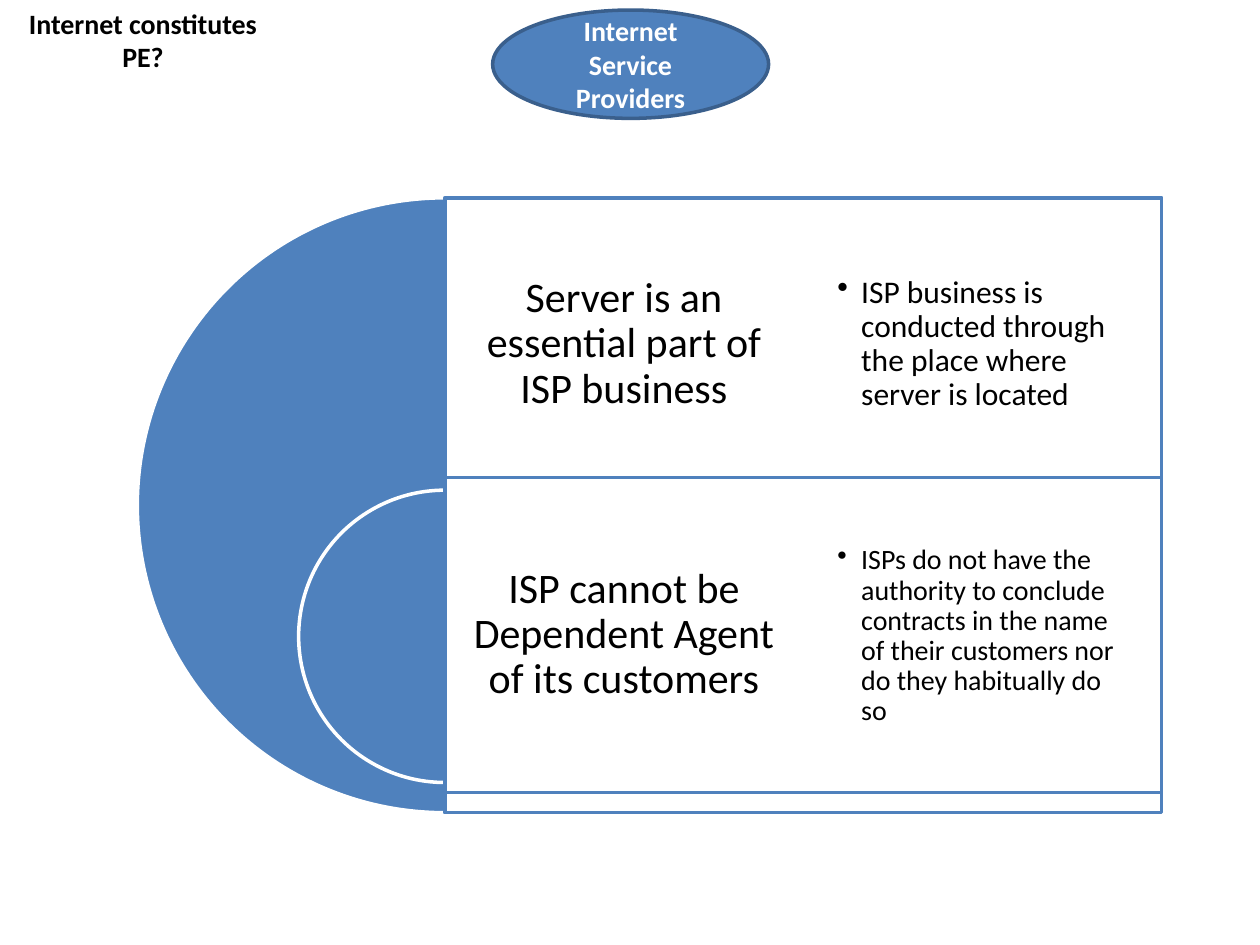
from lxml.etree import SubElement
from pptx import Presentation
from pptx.dml.color import RGBColor
from pptx.enum.shapes import MSO_SHAPE
from pptx.enum.text import MSO_ANCHOR, MSO_AUTO_SIZE, PP_ALIGN
from pptx.oxml.ns import qn
from pptx.util import Inches, Pt

COLORS = {"blue": "4F81BD", "dark_blue": "3A5F8C", "white": "FFFFFF", "black": "000000"}

# Two columns and two rows to the right of the half circles
GRID_LEFT, GRID_TOP = 3.53, 1.57
COLUMN, ROW = 2.845, 2.32

# Diameter, panel top, panel height, statement, detail, detail size
ROWS = [
    (4.88, GRID_TOP, 4.88, "Server is an essential part of ISP business",
     "ISP business is conducted through the place where server is located", 18),
    (2.32, 3.79, 2.5, "ISP cannot be Dependent Agent of its customers",
     "ISPs do not have the authority to conclude contracts in the name of "
     "their customers nor do they habitually do so", 16),
]


def add_figure(preset, left, top, width, height, fill, line):
    shape = slide.shapes.add_shape(
        preset, Inches(left), Inches(top), Inches(width), Inches(height))
    shape.shadow.inherit = False
    shape.fill.solid()
    shape.fill.fore_color.rgb = RGBColor.from_string(COLORS[fill])
    shape.line.color.rgb = RGBColor.from_string(COLORS[line])
    shape.line.width = Pt(2)
    return shape


def write(shape, lines, size, color="black", bold=False, align=PP_ALIGN.CENTER,
          anchor=MSO_ANCHOR.MIDDLE, inset=None, spacing=None):
    """Fill a shape with one paragraph per line and return its text frame."""
    frame = shape.text_frame
    frame.word_wrap = True
    frame.auto_size = MSO_AUTO_SIZE.NONE
    frame.vertical_anchor = anchor
    if inset is not None:
        frame.margin_left = frame.margin_right = Inches(inset)
        frame.margin_top = frame.margin_bottom = Inches(inset)
    for index, line in enumerate(lines):
        paragraph = frame.add_paragraph() if index else frame.paragraphs[0]
        paragraph.alignment = align
        paragraph.line_spacing = spacing
        run = paragraph.add_run()
        run.text = line
        run.font.name = "Calibri"
        run.font.size = Pt(size)
        run.font.bold = bold
        run.font.color.rgb = RGBColor.from_string(COLORS[color])
    return frame


presentation = Presentation()
presentation.slide_width, presentation.slide_height = Inches(10), Inches(7.5)
slide = presentation.slides.add_slide(presentation.slide_layouts[5])

title = slide.shapes.title
title.left, title.top = Inches(0), Inches(0)
title.width, title.height = Inches(2.27), Inches(0.64)
write(title, ["Internet constitutes PE?"], 16, bold=True, anchor=MSO_ANCHOR.TOP)

topic = add_figure(MSO_SHAPE.OVAL, 3.91, 0.08, 2.19, 0.86, "blue", "dark_blue")
write(topic, ["Internet", "Service", "Providers"], 16, "white", bold=True)

for index, (diameter, top, height, statement, detail, detail_size) in enumerate(ROWS):
    row_top = GRID_TOP + index * ROW

    # The flat side of each half circle lies on the left edge of the grid
    half_circle = add_figure(MSO_SHAPE.PIE, GRID_LEFT - diameter / 2, row_top,
                             diameter, diameter, "blue", "white")
    half_circle.adjustments[0], half_circle.adjustments[1] = 54, 162

    panel = add_figure(MSO_SHAPE.RECTANGLE, GRID_LEFT, top, 2 * COLUMN, height,
                       "white", "blue")
    panel_color = panel._element.spPr.find(qn("a:solidFill"))[0]
    SubElement(panel_color, qn("a:alpha"), val="90000")

    statement_height = ROW if index == 0 else height
    statement_box = slide.shapes.add_textbox(
        Inches(GRID_LEFT), Inches(top), Inches(COLUMN), Inches(statement_height))
    write(statement_box, [statement], 24, inset=0.1, spacing=0.9)

    detail_box = slide.shapes.add_textbox(
        Inches(GRID_LEFT + COLUMN), Inches(row_top), Inches(COLUMN), Inches(ROW))
    frame = write(detail_box, [detail], detail_size, align=PP_ALIGN.LEFT,
                  inset=0.27, spacing=0.9)
    paragraph = frame.paragraphs[0]
    paragraph.level = 1
    properties = paragraph._p.get_or_add_pPr()
    properties.set("marL", str(Inches(0.19)))
    properties.set("indent", str(-Inches(0.19)))
    SubElement(properties, qn("a:buChar"), char="•")

presentation.save("out.pptx")
